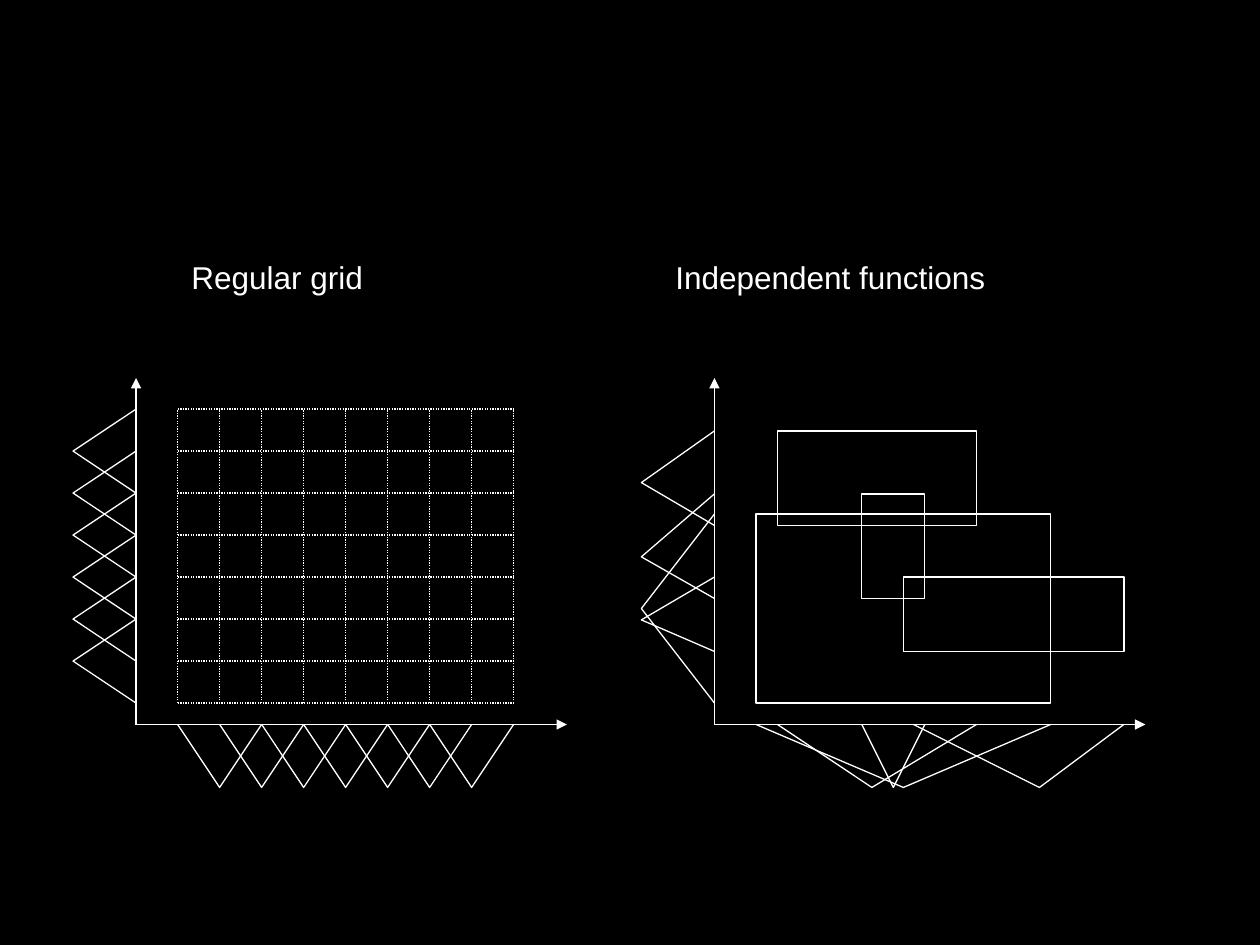
from dataclasses import dataclass

from lxml import etree
from pptx import Presentation
from pptx.dml.color import RGBColor
from pptx.enum.dml import MSO_LINE
from pptx.enum.shapes import MSO_CONNECTOR, MSO_SHAPE
from pptx.enum.text import MSO_ANCHOR, MSO_AUTO_SIZE, PP_ALIGN
from pptx.oxml.ns import qn
from pptx.util import Inches, Pt

STRAIGHT = MSO_CONNECTOR.STRAIGHT
RECTANGLE = MSO_SHAPE.RECTANGLE
DOTTED = MSO_LINE.ROUND_DOT
COLORS = {"background": "000000", "ink": "FFFFFF"}
FONT = "Arial"

CELL = 1 / 3
COLUMNS, ROWS = 8, 7
GRID_LEFT, GRID_BOTTOM = 0.33, 0.17
DEPTH = 0.5  # how far a membership function reaches below the x axis


@dataclass
class FuzzyRule:
    """Extents and peaks measured right of and above the axes' origin."""
    left: float
    right: float
    bottom: float
    top: float
    peak_x: float
    peak_y: float
    foot: float  # where its function leaves the x axis


RULES = [
    FuzzyRule(0.5, 2.08, 1.58, 2.33, 1.25, 1.92, 0.5),
    FuzzyRule(1.17, 1.67, 1, 1.83, 1.42, 1.33, 1.17),
    FuzzyRule(1.5, 3.25, 0.58, 1.17, 2.58, 0.83, 1.58),
    FuzzyRule(0.33, 2.67, 0.17, 1.67, 1.5, 0.92, 0.33),
]


def color(name):
    return RGBColor.from_string(COLORS[name])


def style_line(line):
    line.color.rgb = color("ink")
    line.width = Pt(0.75)


def at(origin, x, y):
    """Turn a point of the diagram, with y upwards, into slide lengths."""
    return Inches(origin[0] + x), Inches(origin[1] - y)


def add_line(panel, origin, start, end, dash=None, arrow=False):
    connector = panel.shapes.add_connector(
        STRAIGHT, *at(origin, *start), *at(origin, *end))
    style_line(connector.line)
    if dash:
        connector.line.dash_style = dash
    if arrow:
        etree.SubElement(connector.line._get_or_add_ln(), qn("a:tailEnd"), type="triangle")
    etree.SubElement(connector._element.spPr, qn("a:effectLst"))


def add_membership(panel, origin, *corners):
    start, *others = [at(origin, *corner) for corner in corners]
    builder = panel.shapes.build_freeform(*start)
    builder.add_line_segments(others, close=False)
    triangle = builder.convert_to_shape()
    triangle.fill.background()
    triangle.shadow.inherit = False
    style_line(triangle.line)


def add_heading(panel, text, left, top, width, height):
    heading = panel.shapes.add_textbox(
        Inches(left), Inches(top), Inches(width), Inches(height))
    frame = heading.text_frame
    frame.word_wrap = False
    frame.auto_size = MSO_AUTO_SIZE.SHAPE_TO_FIT_TEXT
    frame.vertical_anchor = MSO_ANCHOR.MIDDLE
    paragraph = frame.paragraphs[0]
    paragraph.alignment = PP_ALIGN.CENTER
    run = paragraph.add_run()
    run.text = text
    run.font.name = FONT
    run.font.size = Pt(18)
    run.font.color.rgb = color("ink")


def add_axes(panel, origin, width, height):
    add_line(panel, origin, (0, 0), (width, 0), arrow=True)
    add_line(panel, origin, (0, 0), (0, height), arrow=True)


def add_regular_grid(slide, left, top, width, height):
    panel = slide.shapes.add_group_shape()
    reach = 0.5  # of the functions left of the y axis
    origin = (left + reach, top + height - DEPTH)
    add_heading(panel, "Regular grid", left + 0.83, top, 1.58, 0.4)
    add_axes(panel, origin, width - reach, 2.75)

    xs = [GRID_LEFT + CELL * column for column in range(COLUMNS + 1)]
    ys = [GRID_BOTTOM + CELL * row for row in range(ROWS + 1)]
    for start, peak, end in zip(xs, xs[1:], xs[2:]):
        add_membership(panel, origin, (start, 0), (peak, -DEPTH), (end, 0))
    for start, peak, end in zip(ys, ys[1:], ys[2:]):
        add_membership(panel, origin, (0, end), (-reach, peak), (0, start))
    for y in ys:
        add_line(panel, origin, (xs[0], y), (xs[-1], y), dash=DOTTED)
    for x in xs:
        add_line(panel, origin, (x, ys[0]), (x, ys[-1]), dash=DOTTED)


def add_independent_functions(slide, left, top, width, height):
    panel = slide.shapes.add_group_shape()
    reach = 0.58
    origin = (left + reach, top + height - DEPTH)
    add_heading(panel, "Independent functions", left + 0.16, top, 2.68, 0.4)
    add_axes(panel, origin, width - reach, 2.75)

    for rule in RULES:
        patch = panel.shapes.add_shape(
            RECTANGLE, *at(origin, rule.left, rule.top),
            Inches(rule.right - rule.left), Inches(rule.top - rule.bottom))
        patch.fill.background()
        patch.shadow.inherit = False
        style_line(patch.line)
    for rule in RULES:
        add_membership(panel, origin, (0, rule.top), (-reach, rule.peak_y), (0, rule.bottom))
        add_membership(panel, origin, (rule.foot, 0), (rule.peak_x, -DEPTH), (rule.right, 0))


def main():
    presentation = Presentation()
    presentation.slide_width, presentation.slide_height = Inches(10), Inches(7.5)
    slide = presentation.slides.add_slide(presentation.slide_layouts[6])
    slide.background.fill.solid()
    slide.background.fill.fore_color.rgb = color("background")
    add_regular_grid(slide, 0.58, 2, 3.92, 4.25)
    add_independent_functions(slide, 5.09, 2, 4, 4.25)
    presentation.save("out.pptx")


if __name__ == "__main__":
    main()
